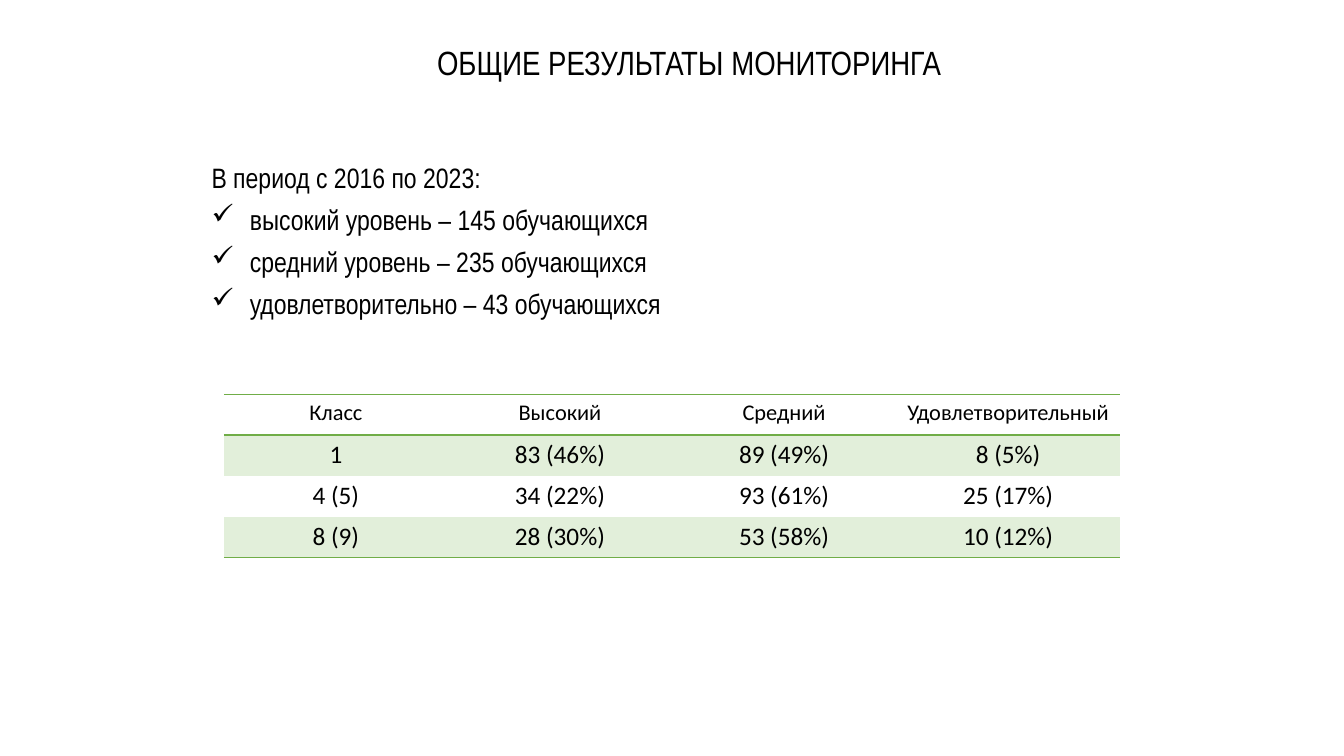
from lxml import etree
from pptx import Presentation
from pptx.dml.color import RGBColor
from pptx.enum.shapes import MSO_SHAPE
from pptx.enum.text import MSO_ANCHOR, PP_ALIGN
from pptx.oxml.ns import qn
from pptx.util import Inches, Pt

CENTER, LEFT = PP_ALIGN.CENTER, PP_ALIGN.LEFT
TOP, MIDDLE = MSO_ANCHOR.TOP, MSO_ANCHOR.MIDDLE

# Content
TITLE = "ОБЩИЕ РЕЗУЛЬТАТЫ МОНИТОРИНГА"
PERIOD = "В период с 2016 по 2023:"
LEVELS = [
    "высокий уровень – 145 обучающихся",
    "средний уровень – 235 обучающихся",
    "удовлетворительно – 43 обучающихся",
]
RESULTS = [
    ("Класс", "Высокий", "Средний", "Удовлетворительный"),
    ("1", "83 (46%)", "89 (49%)", "8 (5%)"),
    ("4 (5)", "34 (22%)", "93 (61%)", "25 (17%)"),
    ("8 (9)", "28 (30%)", "53 (58%)", "10 (12%)"),
]
BLACK, WHITE, GREEN, PALE_GREEN = "000000", "FFFFFF", "70AD47", "E2EFDA"
PLAIN_TABLE_STYLE = "{2D5ABB26-0587-4C30-8999-92F81FD0307C}"


def color(hex_code):
    return RGBColor.from_string(hex_code)


def format_paragraph(paragraph, font_name, size, align):
    paragraph.alignment = align
    paragraph.font.name = font_name
    paragraph.font.size = Pt(size)
    paragraph.font.color.rgb = color(BLACK)


def set_indent(paragraph, margin, first_line, bullet=None):
    properties = paragraph._p.get_or_add_pPr()
    properties.set("marL", str(Inches(margin)))
    properties.set("indent", str(Inches(first_line)))
    if bullet:
        etree.SubElement(properties, qn("a:buChar")).set("char", bullet)


def add_border(cell, side):
    line = etree.SubElement(cell._tc.get_or_add_tcPr(), qn("a:" + side))
    line.set("w", str(Pt(1)))
    fill = etree.SubElement(line, qn("a:solidFill"))
    etree.SubElement(fill, qn("a:srgbClr")).set("val", GREEN)


prs = Presentation()
prs.slide_width, prs.slide_height = Inches(13.33), Inches(7.5)
slide = prs.slides.add_slide(prs.slide_layouts[5])

# Title
title = slide.shapes.title
title.left, title.top = Inches(1.83), Inches(0.37)
title.width, title.height = Inches(10.01), Inches(0.5)
title.text_frame.text = TITLE
title.text_frame.vertical_anchor = TOP
format_paragraph(title.text_frame.paragraphs[0], "Arial Narrow", 24, CENTER)

# Summary with check marks
summary = slide.shapes.add_shape(
    MSO_SHAPE.RECTANGLE, Inches(1), Inches(1.54), Inches(11.34), Inches(1.7))
summary.shadow.inherit = False
summary.fill.solid()
summary.fill.fore_color.rgb = color(WHITE)
summary.line.fill.background()
summary_text = summary.text_frame
summary_text.word_wrap = True
summary_text.vertical_anchor = TOP
summary_text.text = "\n".join([PERIOD] + LEVELS)
for i, paragraph in enumerate(summary_text.paragraphs):
    format_paragraph(paragraph, "Arial Narrow", 20, LEFT)
    paragraph.space_before = Pt(6)
    if i == 0:
        set_indent(paragraph, 1, 0)
    else:
        set_indent(paragraph, 1.38, -0.38, "✓")

# Results by class
row_count, column_count = len(RESULTS), len(RESULTS[0])
results = slide.shapes.add_table(
    row_count, column_count, Inches(2.22), Inches(3.91),
    Inches(8.89), Inches(1.62)).table
results.first_row = results.horz_banding = False
results._tbl.tblPr.find(qn("a:tableStyleId")).text = PLAIN_TABLE_STYLE
for r, row in enumerate(RESULTS):
    is_header = r == 0
    for c, value in enumerate(row):
        cell = results.cell(r, c)
        cell.text = value
        cell.vertical_anchor = TOP if is_header else MIDDLE
        format_paragraph(cell.text_frame.paragraphs[0], "Calibri",
                         16 if is_header else 18, CENTER)
        if is_header:
            add_border(cell, "lnT")
        if r in (0, row_count - 1):
            add_border(cell, "lnB")
        if r % 2:
            cell.fill.solid()
            cell.fill.fore_color.rgb = color(PALE_GREEN)
        else:
            cell.fill.background()

prs.save("out.pptx")
